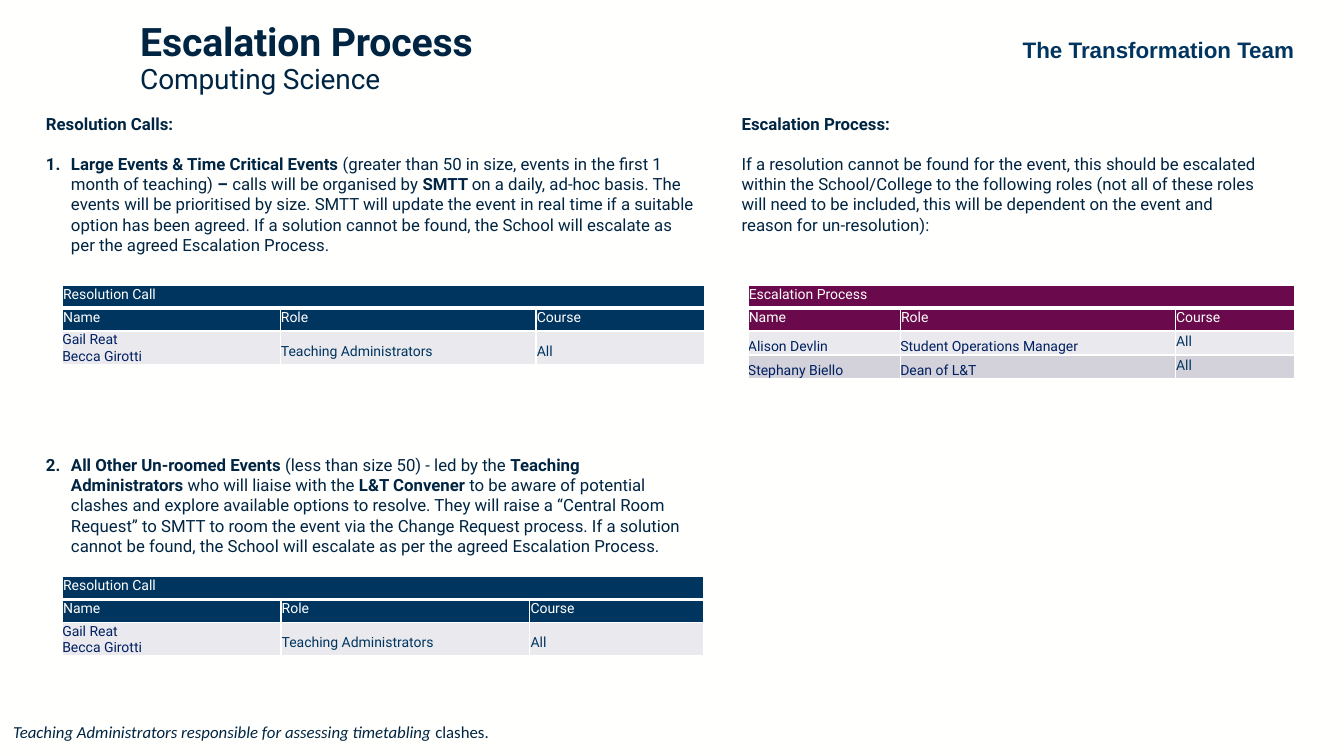
from copy import deepcopy

from lxml.etree import SubElement
from pptx import Presentation
from pptx.dml.color import RGBColor
from pptx.enum.text import MSO_ANCHOR as Anchor, MSO_AUTO_SIZE as AutoSize, PP_ALIGN as Align
from pptx.oxml.ns import qn
from pptx.util import Cm, Pt

PAPER = RGBColor(0xFF, 0xFF, 0xFE)
INK = RGBColor(0x00, 0x25, 0x42)
BLUE = RGBColor(0x00, 0x35, 0x5F)
PLUM = RGBColor(0x6A, 0x09, 0x4B)
NAVY = RGBColor(0x00, 0x20, 0x60)
BANDS = (RGBColor(0xEA, 0xE9, 0xEE), RGBColor(0xD3, 0xD1, 0xDA))

LINE = 14.3  # height of one 12 pt text line, in points
HEADER_HEIGHT = 0.57
INDENT = Cm(0.63)
HEADINGS = ("Name", "Role", "Course")
CALL_ROWS = [("Gail Reat\nBecca Girotti", "Teaching Administrators", "All")]
ESCALATION_ROWS = [
    ("Alison Devlin", "Student Operations Manager", "All"),
    ("Stephany Biello", "Dean of L&T", "All"),
]

# Runs are (text, bold)
LARGE_EVENTS = [
    ("Large Events & Time Critical Events ", True),
    ("(greater than 50 in size, events in the first 1 month of teaching) ", False),
    ("– ", True),
    ("calls will be organised by ", False),
    ("SMTT ", True),
    ("on a daily, ad-hoc basis. The events will be prioritised by size. SMTT will update "
     "the event in real time if a suitable option has been agreed. If a solution cannot be "
     "found, the School will escalate as per the agreed Escalation Process.", False),
]
OTHER_EVENTS = [
    ("All Other Un-roomed Events ", True),
    ("(less than size 50) - led by the ", False),
    ("Teaching Administrators ", True),
    ("who will liaise with the ", False),
    ("L&T Convener ", True),
    ("to be aware of potential clashes and explore available options to resolve. They will "
     "raise a “Central Room Request” to SMTT to room the event via the Change Request "
     "process. If a solution cannot be found, the School will escalate as per the agreed "
     "Escalation Process.", False),
]
ESCALATION = [
    ("If a resolution cannot be found for the event, this should be escalated within the "
     "School/College to the following roles (not all of these roles will need to be "
     "included, this will be dependent on the event and reason for un-resolution):", False),
]


def add_span(para, text, size=12, color=INK, name="Roboto", bold=False, italic=False):
    span = para.add_run()
    span.text = text
    font = span.font
    font.size, font.name, font.bold, font.italic = Pt(size), name, bold, italic
    font.color.rgb = color
    return span


def add_text_frame(page, left, top, width, height):
    box = page.shapes.add_textbox(Cm(left), Cm(top), Cm(width), Cm(height))
    box.text_frame.word_wrap = True
    return box.text_frame


def add_title(page, left, top, width, height):
    title = page.shapes.title
    title.left, title.top, title.width, title.height = Cm(left), Cm(top), Cm(width), Cm(height)
    frame = title.text_frame
    frame.auto_size = AutoSize.NONE
    frame.vertical_anchor = Anchor.MIDDLE
    para = frame.paragraphs[0]
    para.alignment = Align.LEFT
    para.line_spacing = 0.9
    heading = add_span(para, "Escalation Process", 28, bold=True)
    para.add_line_break()
    subject = add_span(para, "Computing Science", 20)
    for span in (heading, subject):
        span.font._element.set("spc", "-10")
    # The line break takes the size of the heading
    para._p.find(qn("a:br")).append(deepcopy(heading.font._element))


def add_team_name(page, left, top, width, height):
    para = add_text_frame(page, left, top, width, height).paragraphs[0]
    para.alignment = Align.CENTER
    add_span(para, "The Transformation Team", 16, BLUE, "Arial", bold=True)


def add_section(page, left, top, width, height, heading, items, gaps, numbered=False):
    """A bold heading, then each item after its gap, counted in text lines."""
    frame = add_text_frame(page, left, top, width, height)
    add_span(frame.paragraphs[0], heading, bold=True)
    for item, gap in zip(items, gaps):
        para = frame.add_paragraph()
        para.space_before = Pt(gap * LINE)
        if numbered:
            props = para._p.get_or_add_pPr()
            props.set("marL", str(INDENT))
            props.set("indent", str(-INDENT))
            SubElement(props, qn("a:buFont"), typeface="+mj-lt")
            SubElement(props, qn("a:buAutoNum"), type="arabicPeriod")
        for text, bold in item:
            add_span(para, text, bold=bold)


def format_cell(cell, text, fill, color, inset=True, spaced=False, top=1, bottom=1):
    # Borders come before the fill
    props = cell._tc.get_or_add_tcPr()
    for side, points in (("L", 1), ("R", 1), ("T", top), ("B", bottom)):
        line = SubElement(props, qn(f"a:ln{side}"), w=str(Pt(points)))
        solid = SubElement(line, qn("a:solidFill"))
        SubElement(solid, qn("a:srgbClr"), val=str(PAPER))
    cell.fill.solid()
    cell.fill.fore_color.rgb = fill
    cell.vertical_anchor = Anchor.BOTTOM
    cell.margin_left = cell.margin_right = cell.margin_top = Cm(0.02 if inset else 0)
    cell.margin_bottom = Cm(0.13 if inset else 0)
    frame = cell.text_frame
    for index, text_line in enumerate(text.split("\n")):
        para = frame.add_paragraph() if index else frame.paragraphs[0]
        if spaced:
            para.line_spacing = 1.07
            para.space_after = Pt(8)
        add_span(para, text_line, 10, color)


def add_contacts(page, left, top, widths, title, rows, row_height, accent, navy_columns):
    heights = [HEADER_HEIGHT] * 2 + [row_height] * len(rows)
    table = page.shapes.add_table(len(heights), len(widths), Cm(left), Cm(top),
                                  Cm(sum(widths)), Cm(sum(heights))).table
    table.first_row = table.horz_banding = False
    for column, width in zip(table.columns, widths):
        column.width = Cm(width)
    for row, height in zip(table.rows, heights):
        row.height = Cm(height)

    # Title row and column headings
    table.cell(0, 0).merge(table.cell(0, len(widths) - 1))
    format_cell(table.cell(0, 0), title, accent, PAPER, bottom=3)
    for column, heading in enumerate(HEADINGS):
        format_cell(table.cell(1, column), heading, accent, PAPER, top=3)

    # People
    for index, person in enumerate(rows):
        for column, text in enumerate(person):
            navy = column < navy_columns
            format_cell(table.cell(index + 2, column), text, BANDS[index % 2],
                        NAVY if navy else BLUE, inset=not navy, spaced=not navy)


def add_footnote(page, left, top, width, height):
    para = add_text_frame(page, left, top, width, height).paragraphs[0]
    add_span(para, "Teaching Administrators responsible for assessing timetabling ",
             name="Calibri", italic=True)
    add_span(para, "clashes.", name="Calibri")


def main():
    deck = Presentation()
    deck.slide_width, deck.slide_height = Cm(33.87), Cm(19.05)
    page = deck.slides.add_slide(deck.slide_layouts[5])
    page.background.fill.solid()
    page.background.fill.fore_color.rgb = PAPER

    add_title(page, 3.28, 0, 10.74, 2.97)
    add_team_name(page, 25.27, 0.79, 7.85, 0.94)

    # Resolution calls on the left
    add_section(page, 0.91, 2.74, 16.84, 11.53, "Resolution Calls:",
                [LARGE_EVENTS, OTHER_EVENTS], (1, 10), numbered=True)
    for top, widths in ((7.19, (5.49, 6.45, 4.24)), (14.53, (5.51, 6.27, 4.39))):
        add_contacts(page, 1.57, top, widths, "Resolution Call", CALL_ROWS, 0.83, BLUE, 1)

    # Escalation on the right
    add_section(page, 18.44, 2.74, 13.77, 3.84, "Escalation Process:", [ESCALATION], (1,))
    add_contacts(page, 18.85, 7.19, (3.84, 6.93, 3), "Escalation Process",
                 ESCALATION_ROWS, 0.6, PLUM, 2)

    add_footnote(page, 0.08, 18.06, 20.75, 0.76)
    deck.save("out.pptx")


if __name__ == "__main__":
    main()
